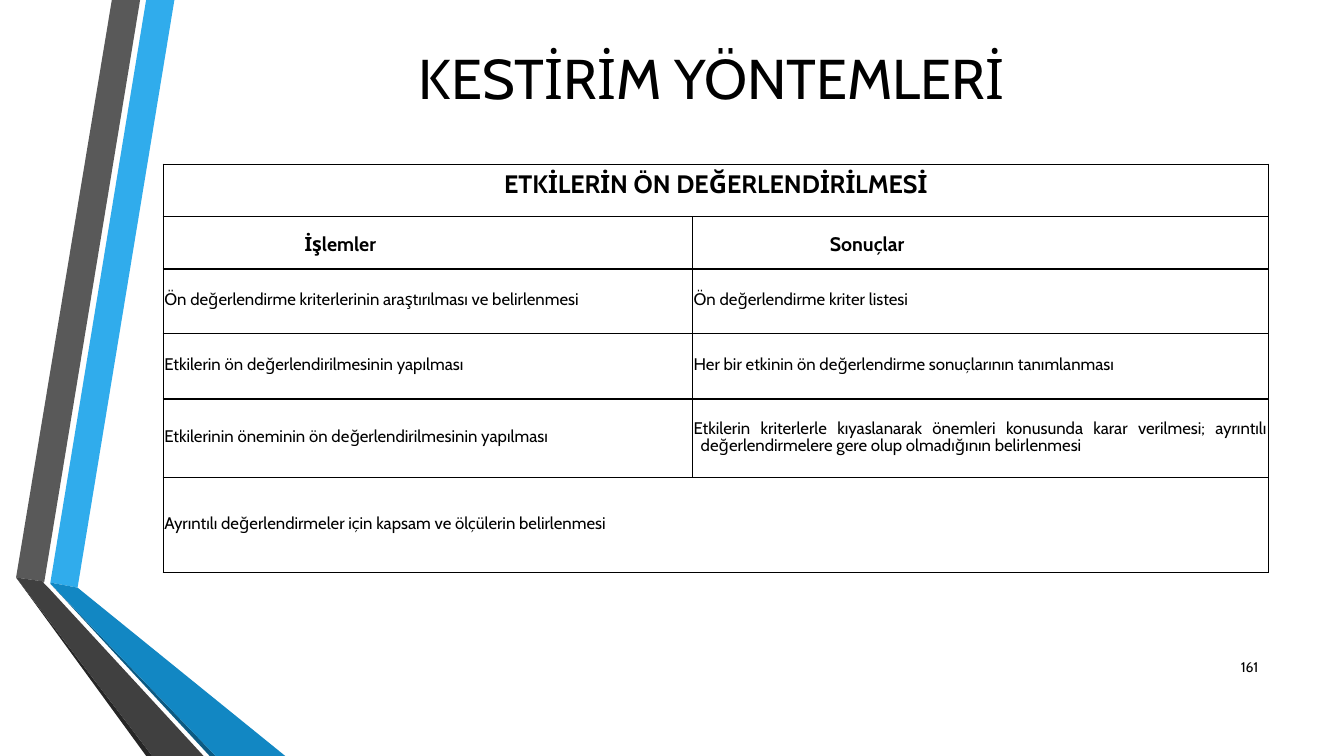
from lxml import etree
from pptx import Presentation
from pptx import util as u
from pptx.dml.color import RGBColor
from pptx.enum import text
from pptx.oxml import ns

FONT = "Cabin"
COLORS = {
    "text": "000000", "border": "000000",
    "blue": "30ACEC", "blue_fold": "1287C3", "blue_edge": "0C5A82",
    "gray": "595959", "gray_fold": "404040", "gray_edge": "262626",
}
# Ribbon outlines in inches, from back to front
RIBBONS = [
    ("blue", [(0.5, 5.78), (0.77, 5.83), (1.73, 0), (1.45, 0)]),
    ("gray", [(1.39, 0), (1.11, 0), (0.16, 5.73), (0.44, 5.77)]),
    ("gray_edge", [(0.16, 5.73), (1.45, 7.5), (1.51, 7.5)]),
    ("blue_edge", [(0.5, 5.79), (2.08, 7.5), (2.14, 7.5)]),
    ("blue_fold", [(0.5, 5.79), (2.14, 7.5), (2.83, 7.5), (0.77, 5.83), (0.5, 5.78)]),
    ("gray_fold", [(2.02, 7.5), (0.48, 5.83), (0.43, 5.78), (0.44, 5.77),
                   (0.16, 5.73), (1.51, 7.5)]),
]
COLUMN_WIDTHS = [5.25, 5.71]
ROW_HEIGHTS = [0.52, 0.52, 0.64, 0.65, 0.78, 0.94]
TABLE_TITLE = "ETKİLERİN ÖN DEĞERLENDİRİLMESİ"
HEADINGS = [("İşlemler", 1.39), ("Sonuçlar", 1.35)]
BODY = [
    ("Ön değerlendirme kriterlerinin araştırılması ve belirlenmesi",
     "Ön değerlendirme kriter listesi"),
    ("Etkilerin ön değerlendirilmesinin yapılması",
     "Her bir etkinin ön değerlendirme sonuçlarının tanımlanması"),
    ("Etkilerinin öneminin ön değerlendirilmesinin yapılması",
     "Etkilerin kriterlerle kıyaslanarak önemleri konusunda karar verilmesi; "
     "ayrıntılı değerlendirmelere gere olup olmadığının belirlenmesi"),
]
FOOTER = "Ayrıntılı değerlendirmeler için kapsam ve ölçülerin belirlenmesi"


def color(name):
    return RGBColor.from_string(COLORS[name])


def write(paragraph, words, size, align, bold=False):
    paragraph.text = words
    paragraph.alignment = align
    font = paragraph.font
    font.name, font.size, font.bold = FONT, u.Pt(size), bold
    font.color.rgb = color("text")


def add_ribbons(slide, left, top):
    for name, outline in RIBBONS:
        points = [(u.Inches(left + x), u.Inches(top + y)) for x, y in outline]
        builder = slide.shapes.build_freeform(*points[0])
        builder.add_line_segments(points[1:], close=True)
        shape = builder.convert_to_shape()
        shape.shadow.inherit = False
        shape.fill.solid()
        shape.fill.fore_color.rgb = color(name)
        shape.line.fill.background()


def add_label(slide, left, top, width, height, words, size, align):
    box = slide.shapes.add_textbox(*map(u.Inches, (left, top, width, height)))
    frame = box.text_frame
    frame.word_wrap = True
    frame.vertical_anchor = text.MSO_ANCHOR.MIDDLE
    write(frame.paragraphs[0], words, size, align)


def style_cell(cell):
    cell.fill.background()
    properties = cell._tc.get_or_add_tcPr()
    for index, side in enumerate(("lnL", "lnR", "lnT", "lnB")):
        line = etree.Element(ns.qn("a:" + side), w=str(u.Pt(1)))
        fill = etree.SubElement(line, ns.qn("a:solidFill"))
        etree.SubElement(fill, ns.qn("a:srgbClr"), val=COLORS["border"])
        properties.insert(index, line)


def fill_cell(cell, words, size, indent, spacing, bold=False, hanging=False):
    cell.vertical_anchor = text.MSO_ANCHOR.MIDDLE
    cell.margin_left = cell.margin_right = u.Inches(0.01)
    cell.margin_top = cell.margin_bottom = 0
    paragraph = cell.text_frame.paragraphs[0]
    write(paragraph, words, size, text.PP_ALIGN.JUSTIFY, bold)
    paragraph.line_spacing = spacing
    properties = paragraph._p.get_or_add_pPr()
    properties.set("marL", str(u.Inches(indent)))
    properties.set("indent", str(-u.Inches(indent) if hanging else 0))


def add_effects_table(slide, left, top):
    frame = slide.shapes.add_table(
        len(ROW_HEIGHTS), len(COLUMN_WIDTHS), u.Inches(left), u.Inches(top),
        u.Inches(sum(COLUMN_WIDTHS)), u.Inches(sum(ROW_HEIGHTS)))
    table = frame.table
    table.first_row = table.horz_banding = False
    for column, width in zip(table.columns, COLUMN_WIDTHS):
        column.width = u.Inches(width)
    for row, height in zip(table.rows, ROW_HEIGHTS):
        row.height = u.Inches(height)
    for cell in table.iter_cells():
        style_cell(cell)

    # Full-width first and last rows
    last = len(ROW_HEIGHTS) - 1
    for row in (0, last):
        table.cell(row, 0).merge(table.cell(row, 1))
    write(table.cell(0, 0).text_frame.paragraphs[0], TABLE_TITLE, 18,
          text.PP_ALIGN.CENTER, bold=True)
    fill_cell(table.cell(last, 0), FOOTER, 12, 0.08, u.Pt(12.2), hanging=True)

    # Headings and body
    for column, (words, indent) in enumerate(HEADINGS):
        fill_cell(table.cell(1, column), words, 14, indent, 1.15, bold=True)
    for row, entries in enumerate(BODY, start=2):
        for column, words in enumerate(entries):
            fill_cell(table.cell(row, column), words, 12, 0.07 * column,
                      u.Pt(12.2), hanging=True)


def main():
    presentation = Presentation()
    presentation.slide_width = u.Inches(13.33)
    presentation.slide_height = u.Inches(7.5)
    slide = presentation.slides.add_slide(presentation.slide_layouts[6])
    add_ribbons(slide, 0, 0)
    add_label(slide, 1.58, 0.34, 10.96, 0.84, "KESTİRİM YÖNTEMLERİ", 40,
              text.PP_ALIGN.CENTER)
    add_effects_table(slide, 1.62, 1.63)
    add_label(slide, 11.98, 6.42, 0.6, 0.4, "161", 10, text.PP_ALIGN.RIGHT)
    presentation.save("out.pptx")


if __name__ == "__main__":
    main()
